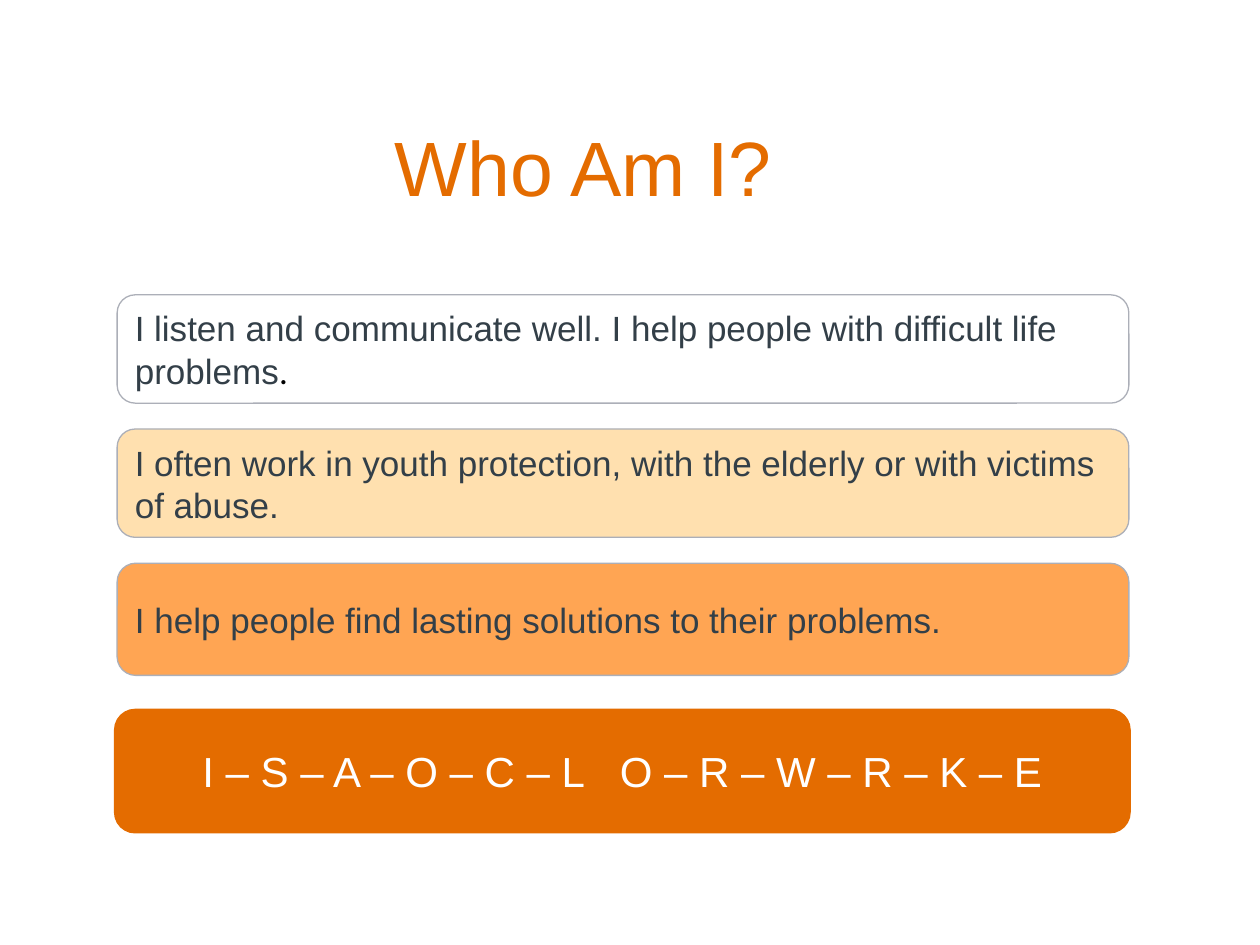
from dataclasses import dataclass

from pptx import Presentation
from pptx.dml.color import RGBColor
from pptx.enum.shapes import MSO_SHAPE
from pptx.enum.text import MSO_ANCHOR, PP_ALIGN
from pptx.util import Inches, Pt

ROUNDED = MSO_SHAPE.ROUNDED_RECTANGLE
MIDDLE = MSO_ANCHOR.MIDDLE
LEFT, CENTER = PP_ALIGN.LEFT, PP_ALIGN.CENTER
BLANK_LAYOUT = 6


@dataclass(frozen=True)
class Theme:
    font: str = "Arial"
    stop_font: str = "Calibri"
    accent: str = "E46C00"
    orange: str = "FFA553"
    cream: str = "FFE0AF"
    outline: str = "ACAFB8"
    ink: str = "333F48"
    black: str = "000000"
    white: str = "FFFFFF"
    title_size: int = 44
    clue_size: int = 20
    puzzle_size: int = 24
    line_width: float = 0.75


THEME = Theme()

# Clue rows: shared left edge and width, equal pitch
CLUE_LEFT, CLUE_WIDTH = 0.93, 8.03
CLUE_TOP, CLUE_PITCH = 2.34, 1.065
CLUES = [
    ("I listen and communicate well. I help people with difficult life problems",
     None, 0.86),
    ("I often work in youth protection, with the elderly or with victims of abuse.",
     THEME.cream, 0.86),
    ("I help people find lasting solutions to their problems.",
     THEME.orange, 0.89),
]


def add_span(para, text, size, color, font=THEME.font):
    span = para.add_run()
    span.text = text
    values = {"name": font, "size": Pt(size)}
    for name, value in values.items():
        setattr(span.font, name, value)
    span.font.color.rgb = RGBColor.from_string(color)
    return span


def prepare_text(box, align):
    frame = box.text_frame
    values = {"word_wrap": True, "vertical_anchor": MIDDLE}
    for name, value in values.items():
        setattr(frame, name, value)
    para = frame.paragraphs[0]
    para.alignment = align
    return para


def add_title(page, text, area):
    box = page.shapes.add_textbox(*map(Inches, area))
    para = prepare_text(box, CENTER)
    add_span(para, text, THEME.title_size, THEME.accent)


def add_panel(page, area, fill, line, align=LEFT):
    panel = page.shapes.add_shape(ROUNDED, *map(Inches, area))
    panel.shadow.inherit = False
    if fill:
        panel.fill.solid()
        panel.fill.fore_color.rgb = RGBColor.from_string(fill)
    else:
        panel.fill.background()
    panel.line.color.rgb = RGBColor.from_string(line)
    panel.line.width = Pt(THEME.line_width)
    return prepare_text(panel, align)


def add_puzzle(page, words, area):
    para = add_panel(page, area, THEME.accent, THEME.accent, CENTER)
    for index, word in enumerate(words):
        if index:
            # A widened space separates the two scrambled words
            gap = add_span(para, " ", THEME.puzzle_size, THEME.white)
            gap.font._element.set("spc", "1300")
        add_span(para, " – ".join(word), THEME.puzzle_size, THEME.white)


def main():
    deck = Presentation()
    deck.slide_width, deck.slide_height = Inches(10), Inches(7.5)
    page = deck.slides.add_slide(deck.slide_layouts[BLANK_LAYOUT])

    # Title
    add_title(page, "Who Am I? ", (0.67, 0.92, 8.09, 0.79))

    # Clues
    for row, (text, fill, height) in enumerate(CLUES):
        area = (CLUE_LEFT, CLUE_TOP + row * CLUE_PITCH, CLUE_WIDTH, height)
        para = add_panel(page, area, fill, THEME.outline)
        add_span(para, text, THEME.clue_size, THEME.ink)
        if row == 0:
            add_span(para, ".", THEME.clue_size, THEME.black, THEME.stop_font)

    # Scrambled answer
    add_puzzle(page, ("ISAOCL", "ORWRKE"), (0.91, 5.63, 8.06, 0.98))

    deck.save("out.pptx")


if __name__ == "__main__":
    main()
